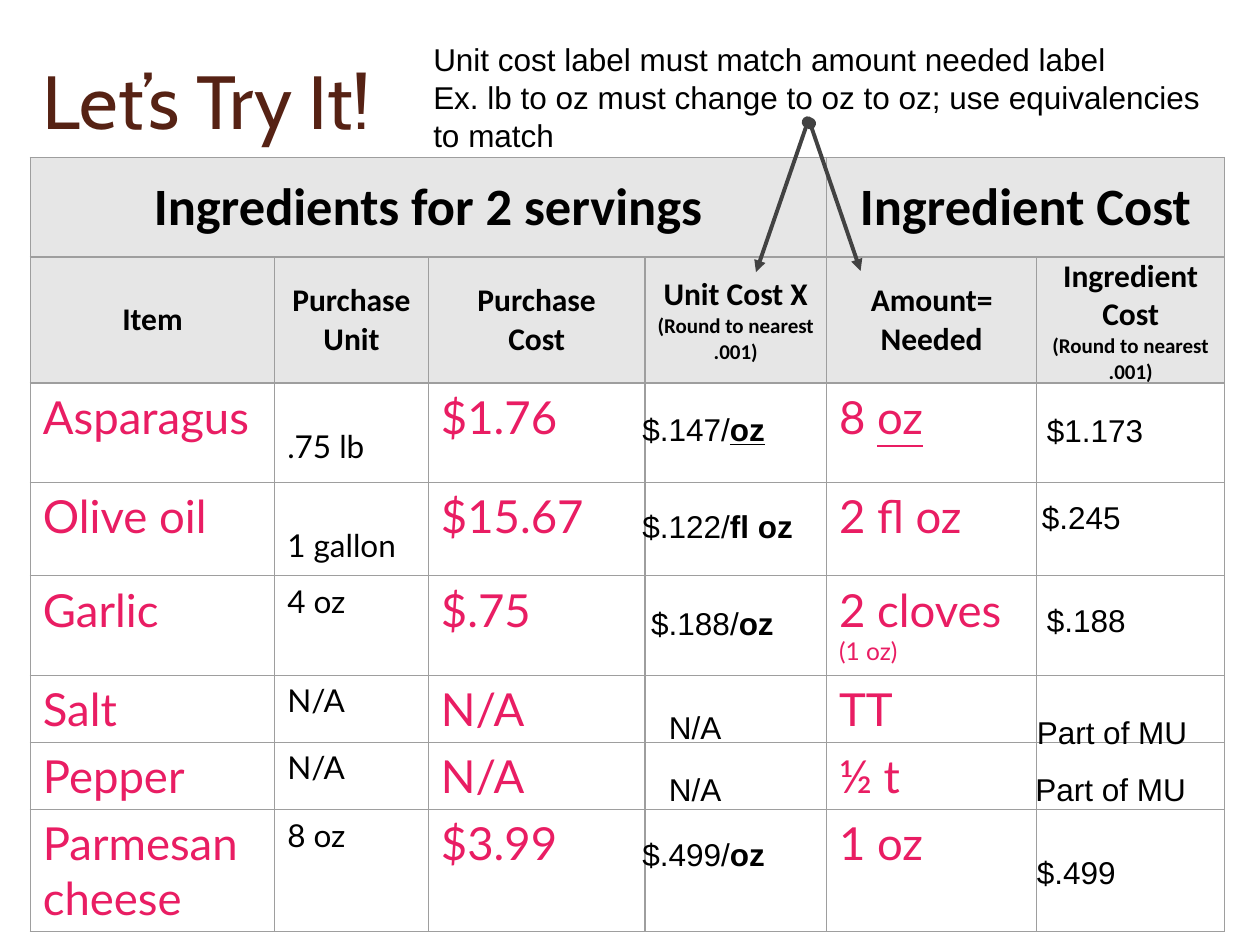
from itertools import accumulate

from lxml.etree import SubElement
from pptx import Presentation
from pptx.dml.color import RGBColor
from pptx.enum.shapes import MSO_CONNECTOR
from pptx.enum.text import MSO_ANCHOR as ANCHOR, PP_ALIGN as ALIGN
from pptx.oxml import parse_xml
from pptx.oxml.ns import nsdecls, qn
from pptx.util import Inches, Pt

UNIT = Inches(0.1)  # the slide is a grid of 100 columns by 75 rows
BLACK, PINK, BROWN = "000000", "E91D63", "562214"
HEAD_FILL, RULE, ARROW = "E6E6E6", "9E9E9E", "424242"

COLS = [19.4, 12.2, 17.2, 14.4, 16.7, 14.9]
ROWS = [7.9, 7.9, 7.9, 7.4, 7.9, 3.4, 3.4, 3.4]
BODY_TOPS = [18.1, 25.9, 33.3, 41.2, 46.5, 51.9]  # below the table's top, once rows fit their text
UNIT_COL, COST_COL = 3, 5

ROUNDING = ("(Round to nearest .001)", {"size": 12})
HEADINGS = [["Item"], ["Purchase Unit"], ["Purchase", "Cost"],
            ["Unit Cost X", [ROUNDING]], ["Amount= Needed"],
            ["Ingredient Cost", [ROUNDING]]]
# item, purchase unit, lines the unit is dropped by, purchase cost, amount needed
INGREDIENTS = [
    ("Asparagus", ".75 lb", 1, "$1.76", ["8 ", ("oz", {"underline": True})]),
    ("Olive oil", "1 gallon", 1, "$15.67", "2 fl oz"),
    ("Garlic", "4 oz", 0, "$.75", ["2 cloves ", ("(1 oz)", {"size": 14})]),
    ("Salt", "N/A", 0, "N/A", "TT"),
    ("Pepper", "N/A", 0, "N/A", "½ t"),
    ("Parmesan cheese", "8 oz", 0, "$3.99", "1 oz"),
]
BOLD = {"bold": True}
# text, then the box's offset from its cell's corner, width and height
UNIT_COSTS = [
    (["$.147/", ("oz", {"bold": True, "underline": True})], -1.2, 0.9, 14.9, 5.2),
    (["$.122/", ("fl oz", BOLD)], -1.2, 0.8, 14.9, 5.2),
    (["$.188/", ("oz", BOLD)], -0.5, 1.1, 13.8, 5.2),
    ("N/A", 0.9, 1.5, 10.1, 3.4),
    ("N/A", 0.9, 1.1, 8.9, 5.2),
    (["$.499/", ("oz", BOLD)], -1.2, 0.9, 14.9, 6.6),
]
INGREDIENT_COSTS = [
    ("$1.173", -0.2, 1, 13.3, 5.2),
    ("$.245", -0.6, 0.1, 14.9, 3.4),
    ("$.188", -0.2, 0.9, 11.9, 5.2),
    ("Part of MU", -1, 1.9, 14.9, 3),
    ("Part of MU", -1.1, 1.1, 16, 5.2),
    ("$.499", -1, 2.3, 14.9, 5.2),
]


def rgb(value):
    return RGBColor.from_string(value)


def grid(*values):
    return [round(v * UNIT) for v in values]


def write(tf, paragraphs, size=18, font="Arial", color=BLACK, bold=False,
          align=ALIGN.LEFT):
    """Each paragraph is a string, or a list of strings and (text, format) pairs."""
    for i, runs in enumerate(paragraphs):
        p = tf.paragraphs[0] if i == 0 else tf.add_paragraph()
        p.alignment = align
        for run in [runs] if isinstance(runs, str) else runs:
            text, own = (run, {}) if isinstance(run, str) else run
            r = p.add_run()
            r.text = text
            r.font.name = font
            r.font.size = Pt(own.get("size", size))
            r.font.bold = own.get("bold", bold)
            r.font.underline = own.get("underline")
            r.font.color.rgb = rgb(color)


def text_box(slide, box, paragraphs, anchor=ANCHOR.TOP, **fmt):
    tf = slide.shapes.add_textbox(*grid(*box)).text_frame
    tf.word_wrap = True
    tf.vertical_anchor = anchor
    tf.margin_left = tf.margin_right = tf.margin_top = tf.margin_bottom = UNIT
    write(tf, paragraphs, **fmt)


def set_borders(cell):
    for i, side in enumerate(("lnL", "lnR", "lnT", "lnB")):
        cell._tc.get_or_add_tcPr().insert(i, parse_xml(
            f'<a:{side} {nsdecls("a")} w="{Pt(0.75)}"><a:solidFill>'
            f'<a:srgbClr val="{RULE}"/></a:solidFill></a:{side}>'))


def heading_cell(cell, paragraphs, size):
    cell.vertical_anchor = ANCHOR.MIDDLE
    cell.margin_left = cell.margin_right = Inches(0.08)
    cell.margin_top = cell.margin_bottom = 0
    write(cell.text_frame, paragraphs, size=size, font="Calibri", bold=True,
          align=ALIGN.CENTER)


def body_cell(cell, text, size=26, color=PINK, drop=0):
    cell.margin_left = cell.margin_right = Inches(0.1)
    cell.margin_top = Inches(0.05 + 0.3 * drop)
    cell.margin_bottom = Inches(0.05)
    write(cell.text_frame, [text], size=size, font="Lato", color=color)


def cost_table(slide, left, top):
    box = grid(left, top, sum(COLS), sum(ROWS))
    table = slide.shapes.add_table(len(ROWS), len(COLS), *box).table
    table.first_row = table.horz_banding = False
    for column, width in zip(table.columns, grid(*COLS)):
        column.width = width
    for row, height in zip(table.rows, grid(*ROWS)):
        row.height = height
    for r in range(len(ROWS)):
        for c in range(len(COLS)):
            cell = table.cell(r, c)
            if r < 2:
                cell.fill.solid()
                cell.fill.fore_color.rgb = rgb(HEAD_FILL)
            else:
                cell.fill.background()
            set_borders(cell)

    for first, last, text in ((0, 3, "Ingredients for 2 servings"),
                              (4, 5, "Ingredient Cost")):
        table.cell(0, first).merge(table.cell(0, last))
        heading_cell(table.cell(0, first), [text], 30)
    for c, paragraphs in enumerate(HEADINGS):
        heading_cell(table.cell(1, c), paragraphs, 18)
    for r, (item, unit, drop, cost, amount) in enumerate(INGREDIENTS, 2):
        body_cell(table.cell(r, 0), item)
        body_cell(table.cell(r, 1), unit, size=18, color=BLACK, drop=drop)
        body_cell(table.cell(r, 2), cost)
        body_cell(table.cell(r, 4), amount)


def answers(slide, left, top):
    """Lay the worked-out costs over the empty cells of the table."""
    edges = list(accumulate(COLS, initial=left))
    for row_top, *pair in zip(BODY_TOPS, UNIT_COSTS, INGREDIENT_COSTS):
        for c, (text, dx, dy, w, h) in zip((UNIT_COL, COST_COL), pair):
            text_box(slide, (edges[c] + dx, top + row_top + dy, w, h), [text])


def arrow(slide, start, end):
    line = slide.shapes.add_connector(MSO_CONNECTOR.STRAIGHT, *grid(*start, *end))
    line.line.color.rgb = rgb(ARROW)
    line.line.width = Pt(2.25)
    ln = line.line._get_or_add_ln()
    SubElement(ln, qn("a:headEnd"), type="oval")
    SubElement(ln, qn("a:tailEnd"), type="triangle")
    SubElement(line._element.spPr, qn("a:effectLst"))


def label_note(slide, left, top):
    arrow(slide, (left + 30.7, top + 7.5), (left + 26.6, top + 19.4))
    arrow(slide, (left + 30.9, top + 7.6), (left + 34.9, top + 19.3))
    text_box(slide, (left, top, 63.8, 7.4), [
        "Unit cost label must match amount needed label",
        "Ex. lb to oz must change to oz to oz; use equivalencies to match"])


def main():
    prs = Presentation()
    prs.slide_width, prs.slide_height = grid(100, 75)
    slide = prs.slides.add_slide(prs.slide_layouts[6])
    text_box(slide, (2.4, 1.6, 82, 12.5), ["Let’s Try It!"],
             anchor=ANCHOR.MIDDLE, size=43, font="Cabin", color=BROWN)
    cost_table(slide, 2.4, 12.5)
    answers(slide, 2.4, 12.5)
    label_note(slide, 33.4, 2.2)
    prs.save("out.pptx")


if __name__ == "__main__":
    main()
